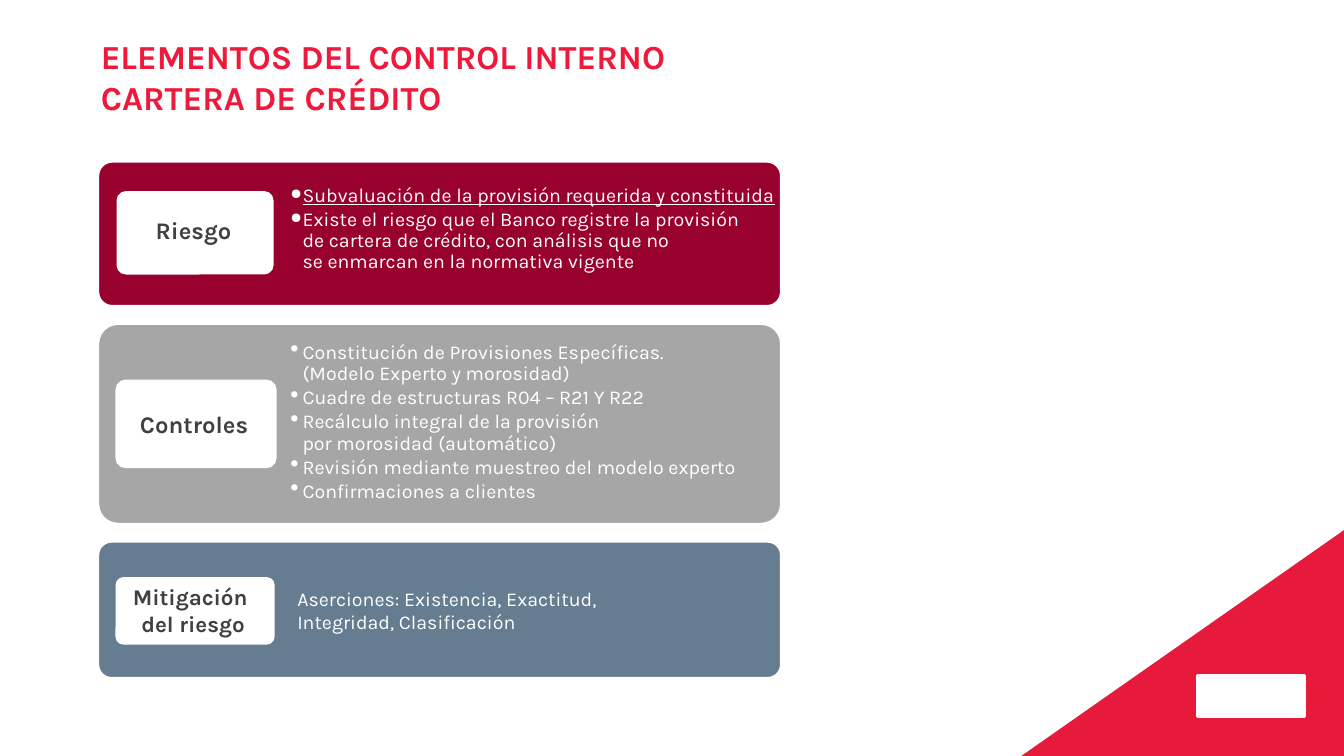
from lxml import etree
from pptx import Presentation
from pptx.dml.color import RGBColor
from pptx.enum import shapes as sh, text as tx
from pptx.oxml import ns
from pptx.util import Inches, Pt

RED = RGBColor(0xE8, 0x1A, 0x3B)
TITLE = RGBColor(0xED, 0x1A, 0x3B)
WINE = RGBColor(0x98, 0x00, 0x2E)
GREY = RGBColor(0xA6, 0xA6, 0xA6)
SLATE = RGBColor(0x65, 0x7C, 0x91)
DARK = RGBColor(0x40, 0x40, 0x40)
WHITE = RGBColor(0xFF, 0xFF, 0xFF)

LEFT, TOP, WIDTH, GAP = 0.97, 1.6, 6.78, 0.17

# Card: height, fill, white tag box, label box, label, label size
CARDS = [
    (1.44, WINE, (1.17, 1.91, 1.53, 0.8), (1.01, 2.09, 1.82, 0.39), "Riesgo", 17),
    (1.99, GREY, (1.16, 3.78, 1.57, 0.85), (1.07, 4.02, 1.71, 0.39), "Controles", 17),
    (1.36, SLATE, (1.16, 5.74, 1.55, 0.64), (1.06, 5.74, 1.71, 0.64),
     "Mitigación \ndel riesgo", 16),
]
RISKS = [
    "Subvaluación de la provisión requerida y constituida",
    "Existe el riesgo que el Banco registre la provisión \n"
    "de cartera de crédito, con análisis que no \n"
    "se enmarcan en la normativa vigente",
]
CHECKS = [
    "Constitución de Provisiones Específicas. \n(Modelo Experto y morosidad)",
    "Cuadre de estructuras R04 – R21 Y R22",
    "Recálculo integral de la provisión \npor morosidad (automático)",
    "Revisión mediante muestreo del modelo experto",
    "Confirmaciones a clientes",
]


def add_box(slide, box, fill, kind=sh.MSO_SHAPE.ROUNDED_RECTANGLE):
    """Filled box with a white outline."""
    shape = slide.shapes.add_shape(kind, *map(Inches, box))
    shape.shadow.inherit = False
    shape.fill.solid()
    shape.fill.fore_color.rgb = fill
    shape.line.color.rgb = WHITE
    shape.line.width = Pt(2)
    if kind == sh.MSO_SHAPE.ROUNDED_RECTANGLE:
        shape.adjustments[0] = 0.1


def add_text(slide, box, paras, size, color, bold=False, align=None,
             inset=(0.1, 0.05, 0.1, 0.05)):
    """Text box with one run per line; returns its paragraphs."""
    frame = slide.shapes.add_textbox(*map(Inches, box)).text_frame
    frame.word_wrap = True
    frame.margin_left, frame.margin_top, frame.margin_right, frame.margin_bottom = map(
        Inches, inset)
    for i, para in enumerate(paras):
        par = frame.add_paragraph() if i else frame.paragraphs[0]
        par.alignment = align
        for j, line in enumerate(para.split("\n")):
            if j:
                par.add_line_break()
            run = par.add_run()
            run.text = line
            font = run.font
            font.name, font.size, font.bold = "Karla", Pt(size), bold
            font.color.rgb = color
    return frame.paragraphs


def add_list(slide, box, items, inset, mark, scale):
    """Bulleted white list with a hanging indent."""
    pars = add_text(slide, box, items, 14, WHITE, inset=inset)
    for par in pars:
        par.line_spacing = 0.9
        par.space_after = Pt(2)
        props = par._p.get_or_add_pPr()
        props.set("marL", str(Inches(0.12)))
        props.set("indent", str(-Inches(0.12)))
        tint = etree.SubElement(props, ns.qn("a:buClr"))
        etree.SubElement(tint, ns.qn("a:srgbClr"), val=str(WHITE))
        etree.SubElement(props, ns.qn("a:buSzPct"), val=str(scale * 1000))
        etree.SubElement(props, ns.qn("a:buChar"), char=mark)
    return pars


def add_corner(slide):
    """Red triangle in the lower right corner."""
    form = slide.shapes.build_freeform(Inches(13.33), Inches(5.26))
    form.add_line_segments([(Inches(10.13), Inches(7.5)), (Inches(13.33), Inches(7.5))])
    shape = form.convert_to_shape()
    shape.shadow.inherit = False
    shape.fill.solid()
    shape.fill.fore_color.rgb = RED
    shape.line.fill.background()


def main():
    prs = Presentation()
    prs.slide_width, prs.slide_height = Inches(13.33), Inches(7.5)
    slide = prs.slides.add_slide(prs.slide_layouts[6])

    # Corner with a plain emblem block
    add_corner(slide)
    add_box(slide, (11.88, 6.7, 1.06, 0.41), WHITE, sh.MSO_SHAPE.RECTANGLE)

    # Title
    add_text(slide, (1, 0.36, 7.46, 1.12),
             ["ELEMENTOS DEL CONTROL INTERNO", "CARTERA DE CRÉDITO"],
             24, TITLE, bold=True, inset=(0, 0, 0, 0))

    # Cards with their labels
    top, tops = TOP, []
    for height, fill, tag, area, label, size in CARDS:
        add_box(slide, (LEFT, top, WIDTH, height), fill)
        add_box(slide, tag, WHITE)
        add_text(slide, area, [label], size, DARK, bold=True,
                 align=tx.PP_ALIGN.CENTER)
        tops.append(top)
        top += height + GAP

    # Card contents
    pars = add_list(slide, (2.49, tops[0], 5.25, CARDS[0][0]), RISKS,
                    (0.39, 0.24, 0.04, 0.04), "●", 75)
    pars[0].runs[0].font.underline = True
    add_list(slide, (2.49, tops[1], 5.25, CARDS[1][0]), CHECKS,
             (0.39, 0.19, 0.03, 0.03), "•", 125)
    add_text(slide, (2.85, 5.77, 4.38, 0.57),
             ["Aserciones: Existencia, Exactitud, \nIntegridad, Clasificación"],
             14, WHITE)

    prs.save("out.pptx")


if __name__ == "__main__":
    main()
